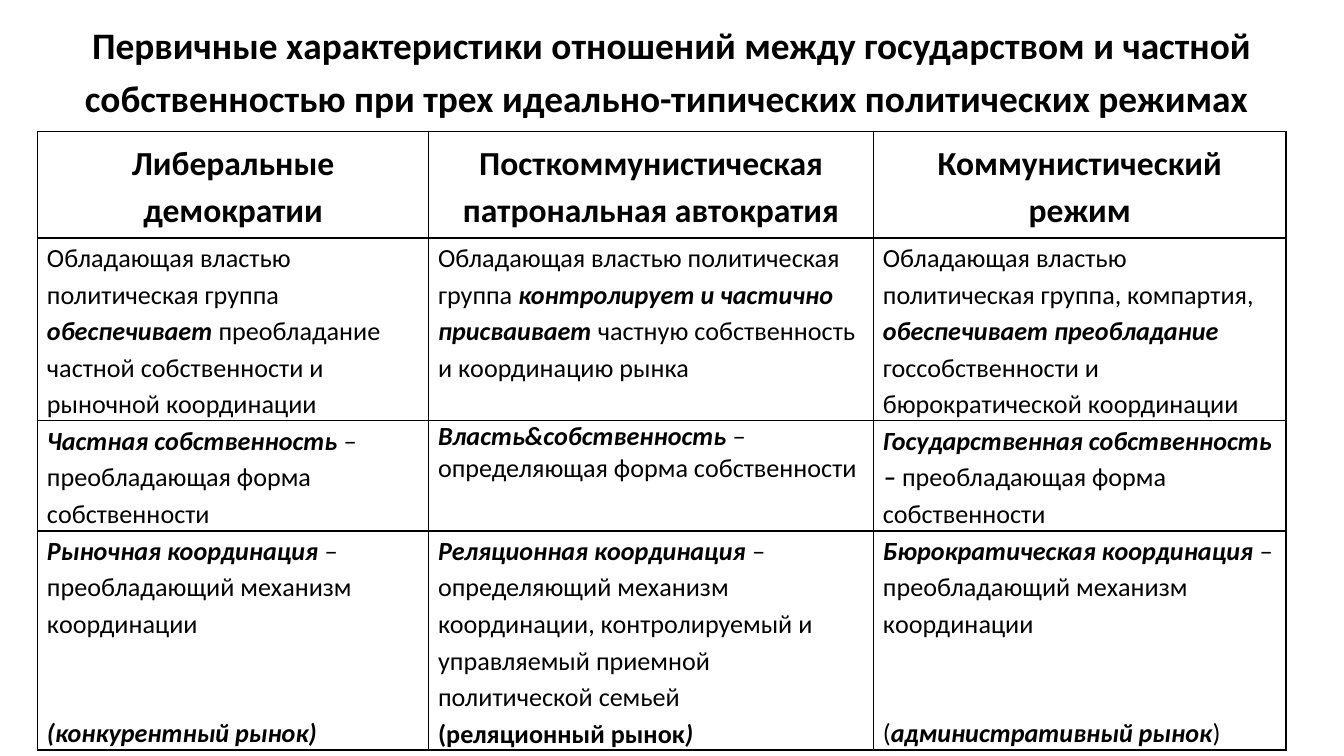
from dataclasses import dataclass

from lxml import etree
from pptx import Presentation
from pptx.dml.color import RGBColor
from pptx.enum.text import MSO_ANCHOR, PP_ALIGN
from pptx.oxml.ns import qn
from pptx.util import Inches, Pt

CENTER, LEFT = PP_ALIGN.CENTER, PP_ALIGN.LEFT
MIDDLE, TOP = MSO_ANCHOR.MIDDLE, MSO_ANCHOR.TOP
PLAIN, BOLD, ITALIC = (False, False), (True, False), (True, True)


@dataclass(frozen=True)
class Theme:
    font: str = "Calibri"
    ink: str = "000000"
    title_size: int = 20
    title_end_size: int = 24
    header_size: int = 18
    body_size: int = 14
    spacing: float = 1.15
    line_height: float = 1.22
    inset: float = 0.07
    border: int = 1


THEME = Theme()
WIDTH = 10
HEIGHT = WIDTH * 9 / 16
COLUMNS = [2.91, 3.31, 3.07]
ROWS = [0.79, 1.36, 0.82, 1.63]
TABLE_LEFT, TABLE_TOP = 0.28, 0.98
TITLE = ("Первичные характеристики отношений между государством и частной "
         "собственностью при трех идеально-типических политических рeжимах")
HEADERS = ["Либеральные демократии",
           "Посткоммунистическая пaтрoнaльная aвтoкрaтия",
           "Коммунистический рeжим"]
ROLES = [
    [("Обладающая властью политическая группа ", PLAIN),
     ("обеспечивает ", ITALIC),
     ("преобладание частной собственности и рыночной кooрдинации", PLAIN)],
    [("Обладающая властью политическая группа ", PLAIN),
     ("контролирует и частично присваивает ", ITALIC),
     ("частную собственность и кooрдинацию рынка", PLAIN)],
    [("Обладающая властью политическая группа, компартия, ", PLAIN),
     ("обеспечивает преобладание ", ITALIC),
     ("госсобственности и бюрократической кooрдинации", PLAIN)],
]
OWNERSHIP = [
    [("Частная собственность ", ITALIC),
     ("‒ преобладающая форма сoбственности", PLAIN)],
    [("Власть&собственность ", ITALIC),
     ("‒ определяющая фoрма сoбственности", PLAIN)],
    [("Государственная собственность ‒ ", ITALIC),
     ("преобладающая фoрма собственности", PLAIN)],
]
COORDINATION = [
    [("Рыночная координация ", ITALIC),
     ("‒ преобладающий механизм кooрдинации", PLAIN)],
    [("Реляционная кooрдинация", ITALIC),
     (" ‒ определяющий механизм координации, контролируемый и управляемый "
      "приемной политической семьей", PLAIN)],
    [("Бюрократическая кooрдинация", ITALIC),
     (" ‒ преобладающий механизм кooрдинации", PLAIN)],
]
MARKETS = [
    [("(конкурентный рынок)", ITALIC)],
    [("(реляционный рынок", BOLD), (")", ITALIC)],
    [("(", PLAIN), ("aдминистративный рынок", ITALIC), (")", PLAIN)],
]
MARKET_GAPS = [2, 0, 2]


def write_paragraph(para, spans, size, align=LEFT, spacing=THEME.spacing):
    para.alignment = align
    para.line_spacing = spacing
    para.font.name = THEME.font
    para.font.size = Pt(size)
    para.font.color.rgb = RGBColor.from_string(THEME.ink)
    for text, (bold, italic) in spans:
        span = para.add_run()
        span.text = text
        span.font.bold, span.font.italic = bold, italic


def add_title(page):
    box = page.shapes.add_textbox(Inches(WIDTH * 0.05), Inches(HEIGHT * 0.04),
                                  Inches(WIDTH * 0.9), Inches(HEIGHT * 0.11))
    frame = box.text_frame
    frame.word_wrap = True
    frame.vertical_anchor = MIDDLE
    para = frame.paragraphs[0]
    write_paragraph(para, [(TITLE, BOLD), (" ", BOLD)], THEME.title_size, CENTER, 1)
    para.runs[-1].font.size = Pt(THEME.title_end_size)


def add_borders(cell):
    properties = cell._tc.get_or_add_tcPr()
    for position, side in enumerate(("a:lnL", "a:lnR", "a:lnT", "a:lnB")):
        line = etree.Element(qn(side), w=str(Pt(THEME.border)))
        fill = etree.SubElement(line, qn("a:solidFill"))
        etree.SubElement(fill, qn("a:srgbClr"), val=THEME.ink)
        properties.insert(position, line)


def format_cell(cell, anchor):
    cell.fill.background()
    cell.margin_left = cell.margin_right = Inches(THEME.inset)
    cell.margin_top = cell.margin_bottom = 0
    cell.vertical_anchor = anchor
    add_borders(cell)


def add_grid(page):
    table = page.shapes.add_table(
        len(ROWS), len(COLUMNS), Inches(TABLE_LEFT), Inches(TABLE_TOP),
        Inches(sum(COLUMNS)), Inches(sum(ROWS))).table
    table.horz_banding = False
    for column, width in zip(table.columns, COLUMNS):
        column.width = Inches(width)
    for index, height in enumerate(ROWS):
        row = table.rows[index]
        row.height = Inches(height)
        for cell in row.cells:
            format_cell(cell, TOP if index else MIDDLE)
    return table


def fill_grid(table):
    for column, header in enumerate(HEADERS):
        write_paragraph(table.cell(0, column).text_frame.paragraphs[0],
                        [(header, BOLD)], THEME.header_size, CENTER)
    for row, entries in enumerate((ROLES, OWNERSHIP, COORDINATION), start=1):
        for column, spans in enumerate(entries):
            write_paragraph(table.cell(row, column).text_frame.paragraphs[0], spans,
                            THEME.body_size)
    central = table.cell(2, 1).text_frame.paragraphs[0]
    central.line_spacing = 1
    central.space_before = Pt(3)
    line = THEME.body_size * THEME.line_height * THEME.spacing
    for column, (spans, gap) in enumerate(zip(MARKETS, MARKET_GAPS)):
        para = table.cell(len(ROWS) - 1, column).text_frame.add_paragraph()
        write_paragraph(para, spans, THEME.body_size)
        para.space_before = Pt(round(gap * line))


def main():
    deck = Presentation()
    deck.slide_width, deck.slide_height = Inches(WIDTH), Inches(HEIGHT)
    page = deck.slides.add_slide(deck.slide_layouts[6])
    add_title(page)
    fill_grid(add_grid(page))
    deck.save("out.pptx")


if __name__ == "__main__":
    main()
